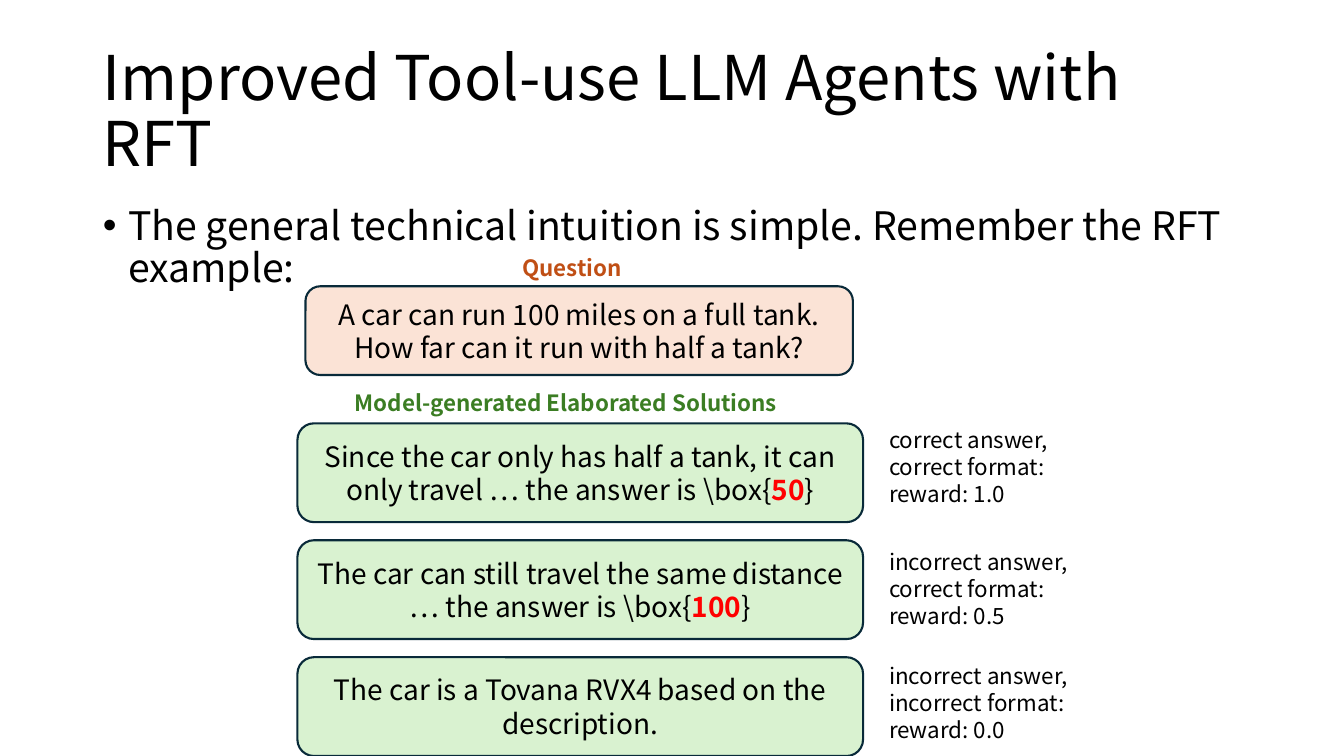
from lxml import etree
from pptx import Presentation
from pptx import util as u
from pptx.dml.color import RGBColor
from pptx.enum import shapes, text
from pptx.oxml import ns

BLACK = RGBColor(0x00, 0x00, 0x00)
RED = RGBColor(0xFF, 0x00, 0x00)
ORANGE = RGBColor(0xC0, 0x4F, 0x15)
GREEN = RGBColor(0x3B, 0x7D, 0x23)
PEACH = RGBColor(0xFB, 0xE3, 0xD6)
MINT = RGBColor(0xD9, 0xF2, 0xD0)
NAVY = RGBColor(0x09, 0x2A, 0x39)

# Layout in inches
SOLUTION_LEFT, SOLUTION_TOP, SOLUTION_STEP = 2.95, 4.2, 1.16
SOLUTION_WIDTH, SOLUTION_HEIGHT = 5.61, 0.98

# Solution as (words, bold answer, words after it), reward text, reward top
SOLUTIONS = [
    (("Since the car only has half a tank, it can only travel … the answer is \\box{", "50", "}"),
     "correct answer, correct format: reward: 1.0", 4.18),
    (("The car can still travel the same distance … the answer is \\box{", "100", "}"),
     "incorrect answer, correct format: reward: 0.5", 5.39),
    (("The car is a Tovana RVX4 based on the description.",),
     "incorrect answer, incorrect format: reward: 0.0", 6.52),
]


def apply_format(target, values):
    for name, value in values.items():
        setattr(target, name, value)


class SlideBuilder:
    font_name = "Noto Sans CJK SC"

    def __init__(self, page):
        self.page = page

    def place(self, box, left, top, width, height):
        apply_format(box, {"left": u.Inches(left), "top": u.Inches(top),
                           "width": u.Inches(width), "height": u.Inches(height)})

    def add_span(self, para, words, size, color=BLACK, bold=False):
        span = para.add_run()
        span.text = words
        apply_format(span.font, {"name": self.font_name, "size": u.Pt(size), "bold": bold})
        span.font.color.rgb = color

    def placeholder(self, box, bounds, words, size, anchor, spacing):
        self.place(box, *bounds)
        apply_format(box.text_frame, {"word_wrap": True, "vertical_anchor": anchor,
                                      "auto_size": text.MSO_AUTO_SIZE.NONE})
        para = box.text_frame.paragraphs[0]
        apply_format(para, {"alignment": text.PP_ALIGN.LEFT, "line_spacing": 0.9,
                            "space_before": u.Pt(spacing)})
        self.add_span(para, words, size)
        return para

    def title(self, words):
        self.placeholder(self.page.shapes.title, (0.92, 0.4, 11.5, 1.45), words,
                         44, text.MSO_ANCHOR.MIDDLE, 0)

    def bullet(self, words):
        para = self.placeholder(self.page.placeholders[1], (0.92, 2, 11.5, 4.76), words,
                                28, text.MSO_ANCHOR.TOP, 10)
        properties = para._p.get_or_add_pPr()
        properties.set("marL", str(u.Inches(0.25)))
        properties.set("indent", str(u.Inches(-0.25)))
        etree.SubElement(properties, ns.qn("a:buFont")).set("typeface", "Arial")
        etree.SubElement(properties, ns.qn("a:buChar")).set("char", "•")

    def label(self, parent, bounds, words, color=BLACK, bold=False):
        box = parent.add_textbox(*map(u.Inches, bounds))
        box.text_frame.word_wrap = True
        self.add_span(box.text_frame.paragraphs[0], words, 16, color, bold)

    def card(self, parent, bounds, parts, fill):
        box = parent.add_shape(shapes.MSO_SHAPE.ROUNDED_RECTANGLE, *map(u.Inches, bounds))
        box.shadow.inherit = False
        box.fill.solid()
        box.fill.fore_color.rgb = fill
        box.line.color.rgb = NAVY
        box.line.width = u.Pt(1.5)
        apply_format(box.text_frame, {"word_wrap": True,
                                      "vertical_anchor": text.MSO_ANCHOR.MIDDLE})
        para = box.text_frame.paragraphs[0]
        para.alignment = text.PP_ALIGN.CENTER
        for index, words in enumerate(parts):
            answer = index == 1
            self.add_span(para, words, 20, RED if answer else BLACK, answer)


def main():
    deck = Presentation()
    apply_format(deck, {"slide_width": u.Inches(13.33), "slide_height": u.Inches(7.5)})
    page = deck.slides.add_slide(deck.slide_layouts[1])
    builder = SlideBuilder(page)

    # Heading and introduction
    builder.title("Improved Tool-use LLM Agents with RFT")
    builder.bullet("The general technical intuition is simple. Remember the RFT example:")

    # Question
    question = page.shapes.add_group_shape().shapes
    builder.card(question, (3.03, 2.84, 5.43, 0.88),
                 ("A car can run 100 miles on a full tank. How far can it run with half a tank?",),
                 PEACH)
    builder.label(question, (5.08, 2.47, 1.35, 0.37), "Question", ORANGE, True)

    # Solutions with their rewards
    solutions = page.shapes.add_group_shape().shapes
    builder.label(solutions, (3.42, 3.81, 4.48, 0.37),
                  "Model-generated Elaborated Solutions", GREEN, True)
    for row, (parts, reward, reward_top) in enumerate(SOLUTIONS):
        top = SOLUTION_TOP + row * SOLUTION_STEP
        builder.card(solutions, (SOLUTION_LEFT, top, SOLUTION_WIDTH, SOLUTION_HEIGHT),
                     parts, MINT)
        builder.label(page.shapes, (8.72, reward_top, 2.1, 0.91), reward)

    deck.save("out.pptx")


if __name__ == "__main__":
    main()
